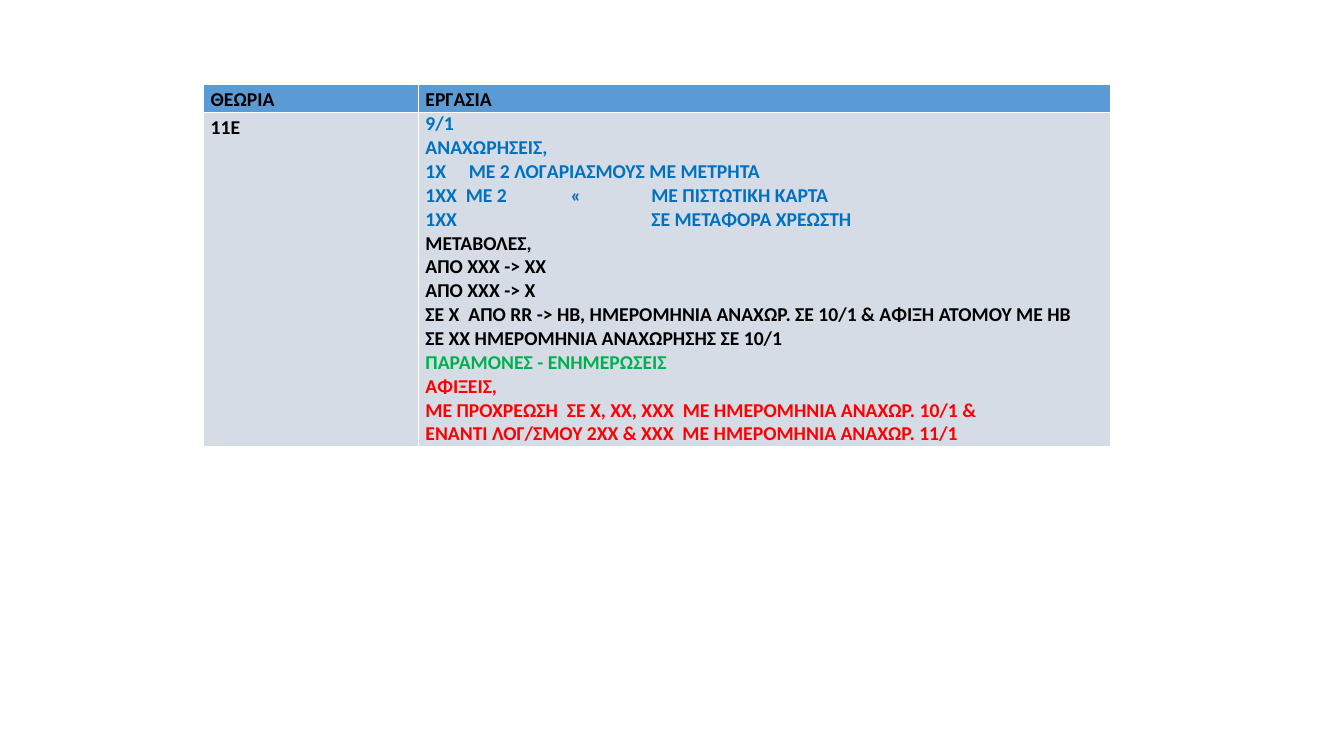
from lxml.etree import SubElement as Sub
from pptx import Presentation
from pptx.dml.color import RGBColor as RGB
from pptx.enum.text import PP_ALIGN as ALIGN
from pptx.oxml.ns import qn
from pptx.util import Inches, Pt

COLORS = {"black": "000000", "white": "FFFFFF", "header": "5B9BD5",
          "body": "D6DCE5", "blue": "0070C0", "green": "00B050", "red": "FF0000"}

TASKS = [
    ("blue", [
        ("9/1", ()),
        ("ΑΝΑΧΩΡΗΣΕΙΣ,", ()),
        ("1Χ\tΜΕ 2 ΛΟΓΑΡΙΑΣΜΟΥΣ ΜΕ ΜΕΤΡΗΤΑ", (0.43,)),
        ("1ΧΧ\tΜΕ 2\t«\tΜΕ ΠΙΣΤΩΤΙΚΗ ΚΑΡΤΑ", (0.4, 1.44, 2.24)),
        ("1ΧΧ\tΣΕ ΜΕΤΑΦΟΡΑ ΧΡΕΩΣΤΗ", (2.24,)),
    ]),
    ("black", [
        ("ΜΕΤΑΒΟΛΕΣ,", ()),
        ("ΑΠΟ ΧΧΧ -> ΧΧ", ()),
        ("ΑΠΟ ΧΧΧ -> Χ", ()),
        ("ΣΕ Χ  ΑΠΟ RR -> ΗΒ, ΗΜΕΡΟΜΗΝΙΑ ΑΝΑΧΩΡ. ΣΕ 10/1 & ΑΦΙΞΗ ΑΤΟΜΟΥ ΜΕ ΗΒ", ()),
        ("ΣΕ ΧΧ ΗΜΕΡΟΜΗΝΙΑ ΑΝΑΧΩΡΗΣΗΣ ΣΕ 10/1", ()),
    ]),
    ("green", [("ΠΑΡΑΜΟΝΕΣ - ΕΝΗΜΕΡΩΣΕΙΣ", ())]),
    ("red", [
        ("ΑΦΙΞΕΙΣ,", ()),
        ("ΜΕ ΠΡΟΧΡΕΩΣΗ  ΣΕ Χ, ΧΧ, ΧΧΧ  ΜΕ ΗΜΕΡΟΜΗΝΙΑ ΑΝΑΧΩΡ. 10/1 &", ()),
        ("ΕΝΑΝΤΙ ΛΟΓ/ΣΜΟΥ 2ΧΧ & ΧΧΧ  ΜΕ ΗΜΕΡΟΜΗΝΙΑ ΑΝΑΧΩΡ. 11/1", ()),
    ]),
]


def write(p, text, font="Calibri", size=14, color="black", bold=True,
          align=None, spacing=None, tabs=()):
    """Write formatted text into a paragraph."""
    p.alignment, p.line_spacing = align, spacing
    if tabs:
        stops = Sub(p._p.get_or_add_pPr(), qn("a:tabLst"))
        for pos in tabs:
            Sub(stops, qn("a:tab"), pos=str(Inches(pos)), algn="l")
    r = p.add_run()
    r.text = text
    r.font.name, r.font.size, r.font.bold = font, Pt(size), bold
    r.font.color.rgb = RGB.from_string(COLORS[color])


class Deck:
    """Holds the style and the current slide."""

    def __init__(self, prs):
        """Add a blank slide."""
        self.s = prs.slides.add_slide(prs.slide_layouts[6])
        self.inset = Inches(0.07)

    def table(self, left, top, widths, heights, rows):
        """Add a table whose cells hold lists of (text, format) lines."""
        frame = self.s.shapes.add_table(
            len(heights), len(widths), Inches(left), Inches(top),
            Inches(sum(widths)), Inches(sum(heights)))
        tbl = frame.table
        for col, width in zip(tbl.columns, widths):
            col.width = Inches(width)
        for row, height, (fill, cells) in zip(tbl.rows, heights, rows):
            row.height = Inches(height)
            for cell, lines in zip(row.cells, cells):
                self.cell(cell, fill, lines)

    def cell(self, cell, fill, lines):
        """Style one cell and write its lines."""
        cell.margin_left = cell.margin_right = self.inset
        cell.margin_top = cell.margin_bottom = 0
        self.borders(cell)
        cell.fill.solid()
        cell.fill.fore_color.rgb = RGB.from_string(COLORS[fill])
        tf = cell.text_frame
        for i, (text, fmt) in enumerate(lines):
            write(tf.add_paragraph() if i else tf.paragraphs[0], text, **fmt)

    def borders(self, cell, color="white", width=1):
        """Draw the four borders of a cell."""
        tc_pr = cell._tc.get_or_add_tcPr()
        for side in ("lnL", "lnR", "lnT", "lnB"):
            ln = Sub(tc_pr, qn(f"a:{side}"), w=str(Pt(width)))
            Sub(Sub(ln, qn("a:solidFill")), qn("a:srgbClr"), val=COLORS[color])


def main():
    """Build and save the slide."""
    prs = Presentation()
    prs.slide_width, prs.slide_height = Inches(13.33), Inches(7.5)
    label = {"align": ALIGN.JUSTIFY, "spacing": 1.15}
    tasks = [(text, {"color": color, "tabs": tabs})
             for color, lines in TASKS for text, tabs in lines]
    Deck(prs).table(2.02, 0.84, [2.13, 6.87], [0.27, 3.27], [
        ("header", [[("ΘΕΩΡΙΑ", label)], [("ΕΡΓΑΣΙΑ", label)]]),
        ("body", [[("11E", label)], tasks]),
    ])
    prs.save("out.pptx")


if __name__ == "__main__":
    main()
